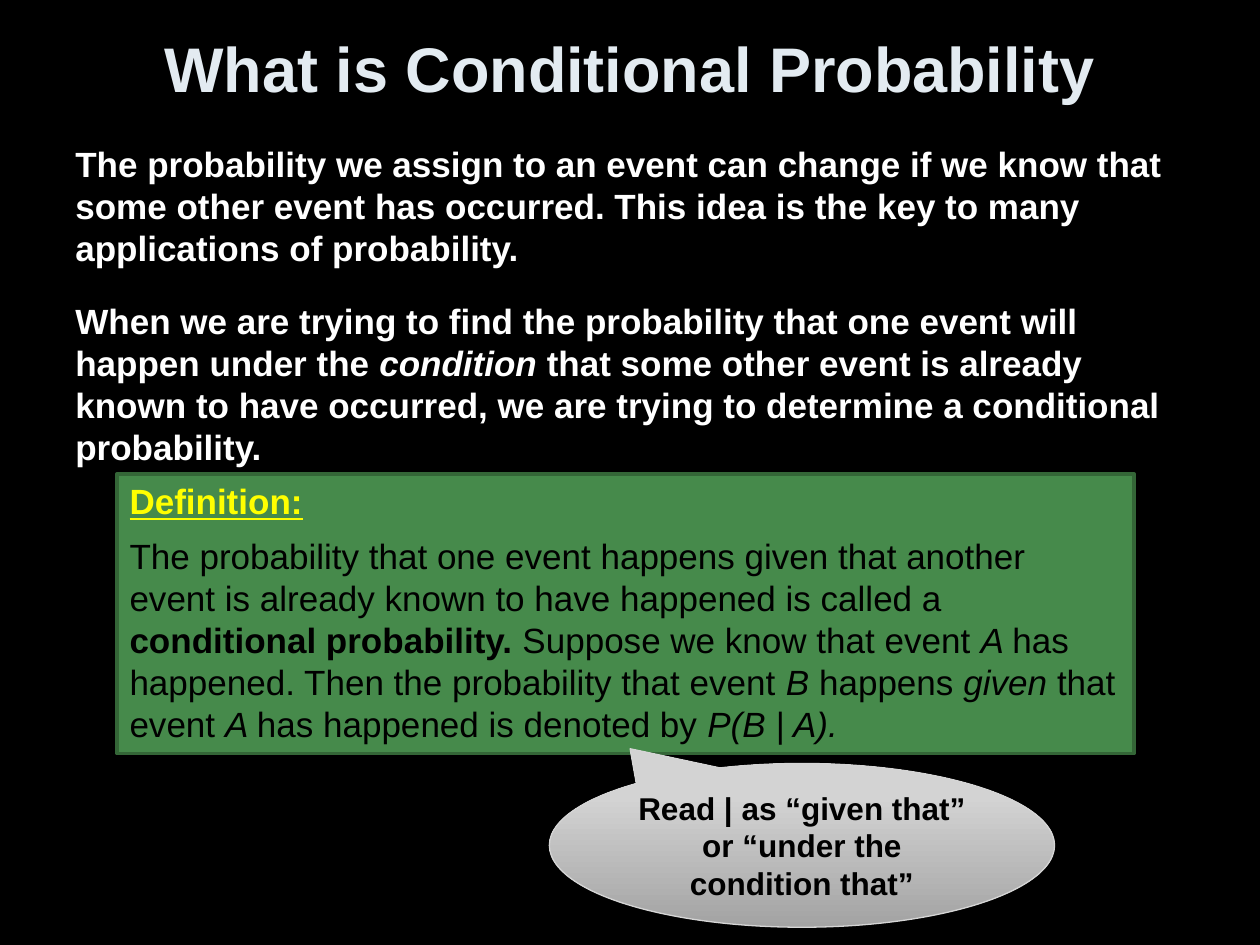
from dataclasses import dataclass

from pptx import Presentation
from pptx.dml.color import RGBColor
from pptx.enum import shapes, text
from pptx.util import Inches, Pt


@dataclass(frozen=True)
class Theme:
    font: str = "Arial"
    title_size: int = 36
    body_size: int = 20
    callout_size: int = 18
    background: str = "000000"
    title: str = "E3EBF1"
    light: str = "FFFFFF"
    dark: str = "000000"
    accent: str = "FFFF00"
    panel: str = "468A4B"
    panel_line: str = "346637"
    callout_low: str = "A3A3A3"
    callout_high: str = "D3D3D3"
    callout_line: str = "D5D5D5"


THEME = Theme()


def rgb(code):
    return RGBColor.from_string(code)


def add_span(para, words, *, color, size=THEME.body_size, bold=False, italic=False, underline=False):
    span = para.add_run()
    span.text = words
    font = span.font
    font.name, font.size, font.color.rgb = THEME.font, Pt(size), rgb(color)
    font.bold, font.italic, font.underline = bold, italic, underline


def write(box, paragraphs, *, gap=0, align=text.PP_ALIGN.LEFT, anchor=text.MSO_ANCHOR.TOP, **style):
    frame = box.text_frame
    frame.word_wrap = True
    frame.vertical_anchor = anchor
    for index, spans in enumerate(paragraphs):
        para = frame.add_paragraph() if index else frame.paragraphs[0]
        para.alignment = align
        para.space_before = Pt(gap if index else 0)
        for words, changes in spans:
            add_span(para, words, **{**style, **changes})


def place(box, left, top, width, height):
    box.left, box.top, box.width, box.height = map(Inches, (left, top, width, height))


def add_panel(page, kind, area, line, width):
    panel = page.shapes.add_shape(kind, *map(Inches, area))
    panel.shadow.inherit = False
    panel.line.color.rgb = rgb(line)
    panel.line.width = Pt(width)
    return panel


def add_title(page, words):
    title = page.shapes.title
    place(title, 0.5, 0.06, 9, 0.95)
    write(title, [[(words, {})]], align=text.PP_ALIGN.CENTER, anchor=text.MSO_ANCHOR.MIDDLE,
          color=THEME.title, size=THEME.title_size, bold=True)


def add_body(page, paragraphs):
    body = page.shapes.add_textbox(*map(Inches, (0.5, 1.08, 9, 2.75)))
    write(body, paragraphs, gap=18, color=THEME.light, bold=True)


def add_definition(page, paragraphs):
    panel = add_panel(page, shapes.MSO_SHAPE.RECTANGLE, (0.93, 3.76, 8.07, 2.22), THEME.panel_line, 2)
    panel.fill.solid()
    panel.fill.fore_color.rgb = rgb(THEME.panel)
    write(panel, paragraphs, gap=7, color=THEME.dark)


def add_callout(page, words):
    callout = add_panel(page, shapes.MSO_SHAPE.OVAL_CALLOUT, (4.36, 6.06, 4.01, 1.3),
                        THEME.callout_line, 0.75)
    callout.adjustments[0], callout.adjustments[1] = -0.34, -0.59
    callout.fill.gradient()
    callout.fill.gradient_angle = 90
    low, high = callout.fill.gradient_stops
    low.color.rgb, low.position = rgb(THEME.callout_low), 0
    high.color.rgb, high.position = rgb(THEME.callout_high), 0.8
    write(callout, [[(words, {})]], align=text.PP_ALIGN.CENTER, anchor=text.MSO_ANCHOR.MIDDLE,
          color=THEME.dark, size=THEME.callout_size, bold=True)


def main():
    deck = Presentation()
    deck.slide_width, deck.slide_height = Inches(10), Inches(7.5)
    page = deck.slides.add_slide(deck.slide_layouts.get_by_name("Title Only"))
    page.background.fill.solid()
    page.background.fill.fore_color.rgb = rgb(THEME.background)

    plain, bold, italic = {}, {"bold": True}, {"italic": True}
    heading = {"color": THEME.accent, "bold": True, "underline": True}
    add_title(page, "What is Conditional Probability")
    add_body(page, [
        [("The probability we assign to an event can change if we know that some other event "
          "has occurred. This idea is the key to many applications of probability.", plain)],
        [("When we are trying to find the probability that one event will happen under the ", plain),
         ("condition", italic),
         (" that some other event is already known to have occurred, we are trying to "
          "determine a conditional probability.", plain)],
    ])
    add_definition(page, [
        [("Definition:", heading)],
        [("The probability that one event happens given that another event is already known "
          "to have happened is called a ", plain),
         ("conditional probability. ", bold),
         ("Suppose we know that event ", plain),
         ("A ", italic),
         ("has happened. Then the probability that event ", plain),
         ("B ", italic),
         ("happens ", plain),
         ("given ", italic),
         ("that event ", plain),
         ("A ", italic),
         ("has happened is denoted by ", plain),
         ("P(B | A).", italic)],
    ])
    add_callout(page, "Read | as “given that” or “under the condition that”")
    deck.save("out.pptx")


if __name__ == "__main__":
    main()
